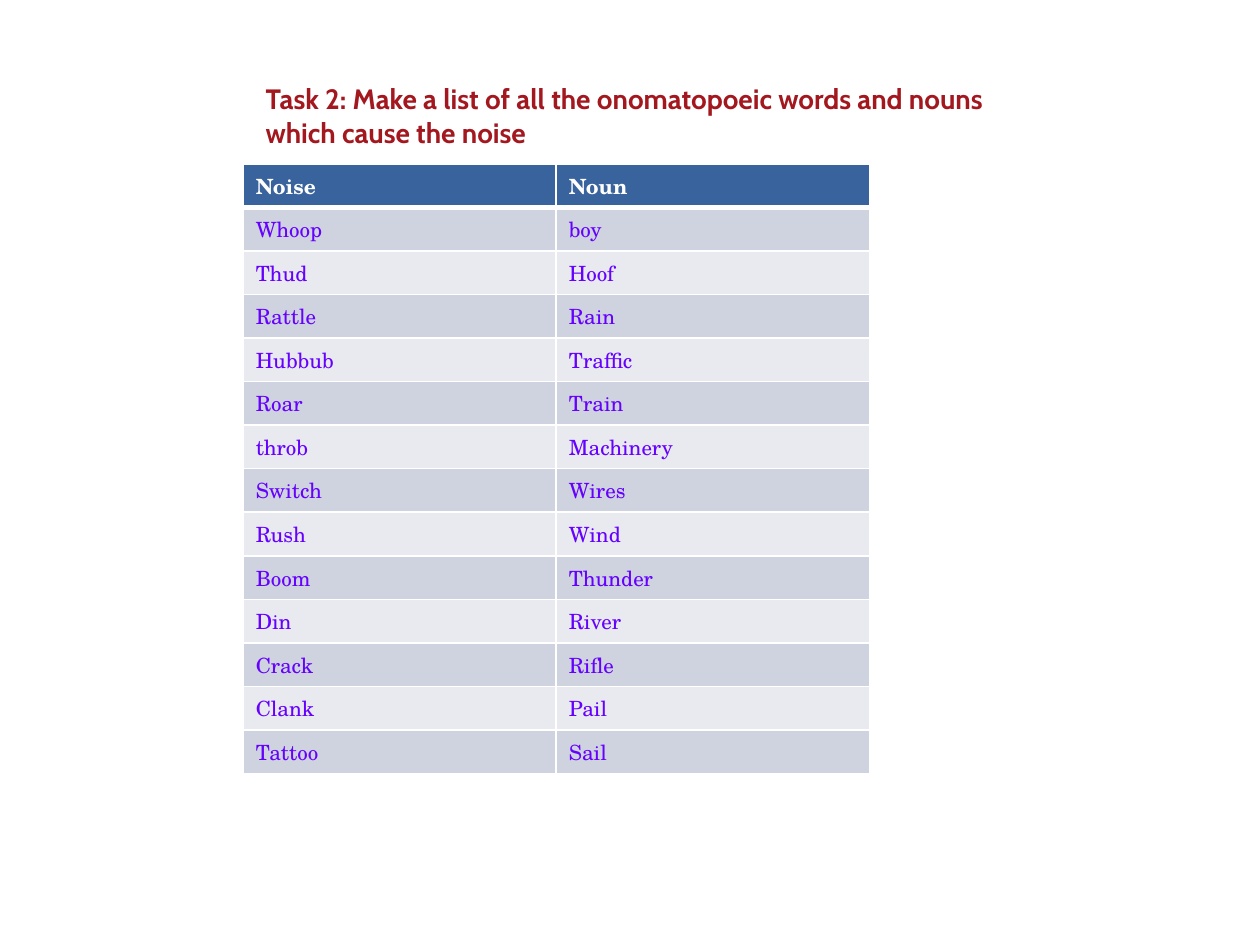
from dataclasses import dataclass

from pptx import Presentation
from pptx.dml.color import RGBColor
from pptx.oxml.ns import qn
from pptx.util import Inches, Pt
from lxml import etree


@dataclass(frozen=True)
class Theme:
    title_font: str = "Cabin"
    table_font: str = "TeX Gyre Schola"
    title_size: float = 16
    table_size: float = 12
    title_color: str = "A3171E"
    header_color: str = "FFFFFF"
    word_color: str = "6600FF"
    header_fill: str = "39639D"
    band_fills: tuple = ("CED3DF", "E8EAEF")
    border_color: str = "FFFFFF"
    border_width: float = 1
    header_rule_width: float = 3


THEME = Theme()
TITLE = "Task 2: Make a list of all the onomatopoeic words and nouns which cause the noise"
HEADINGS = ("Noise", "Noun")
NOISES_AND_NOUNS = [
    ("Whoop", "boy"),
    ("Thud", "Hoof"),
    ("Rattle", "Rain"),
    ("Hubbub", "Traffic"),
    ("Roar", "Train"),
    ("throb", "Machinery"),
    ("Switch", "Wires"),
    ("Rush", "Wind"),
    ("Boom", "Thunder"),
    ("Din", "River"),
    ("Crack", "Rifle"),
    ("Clank", "Pail"),
    ("Tattoo", "Sail"),
]


def write_text(frame, text, *, font, size, color, bold=False):
    run = frame.paragraphs[0].add_run()
    run.text = text
    run.font.name = font
    run.font.size = Pt(size)
    run.font.bold = bold
    run.font.color.rgb = RGBColor.from_string(color)


def add_title(slide):
    title = slide.shapes.add_textbox(Inches(2.01), Inches(0.6), Inches(5.91), Inches(0.71))
    title.text_frame.word_wrap = True
    write_text(title.text_frame, TITLE, font=THEME.title_font, size=THEME.title_size,
               color=THEME.title_color, bold=True)


def set_borders(cell, **widths):
    """Draw each named side (L, R, T, B) at its width in points."""
    properties = cell._tc.get_or_add_tcPr()
    for side, width in widths.items():
        line = etree.SubElement(properties, qn(f"a:ln{side}"), w=str(Pt(width)))
        fill = etree.SubElement(line, qn("a:solidFill"))
        etree.SubElement(fill, qn("a:srgbClr"), val=THEME.border_color)


def fill_cell(cell, text, row):
    is_header = row == 0
    thin, thick = THEME.border_width, THEME.header_rule_width
    set_borders(cell, L=thin, R=thin, T=thick if row == 1 else thin,
                B=thick if is_header else thin)
    background = THEME.header_fill if is_header else THEME.band_fills[(row - 1) % 2]
    cell.fill.solid()
    cell.fill.fore_color.rgb = RGBColor.from_string(background)
    write_text(cell.text_frame, text, font=THEME.table_font, size=THEME.table_size,
               color=THEME.header_color if is_header else THEME.word_color, bold=is_header)


def add_word_table(slide):
    entries = [HEADINGS, *NOISES_AND_NOUNS]
    table = slide.shapes.add_table(len(entries), len(HEADINGS), Inches(1.93), Inches(1.3),
                                   Inches(4.97), Inches(4.84)).table
    for row, entry in enumerate(entries):
        for column, text in enumerate(entry):
            fill_cell(table.cell(row, column), text, row)


def main():
    presentation = Presentation()
    presentation.slide_width = Inches(10)
    presentation.slide_height = Inches(7.5)
    slide = presentation.slides.add_slide(presentation.slide_layouts[6])
    add_title(slide)
    add_word_table(slide)
    presentation.save("out.pptx")


if __name__ == "__main__":
    main()
